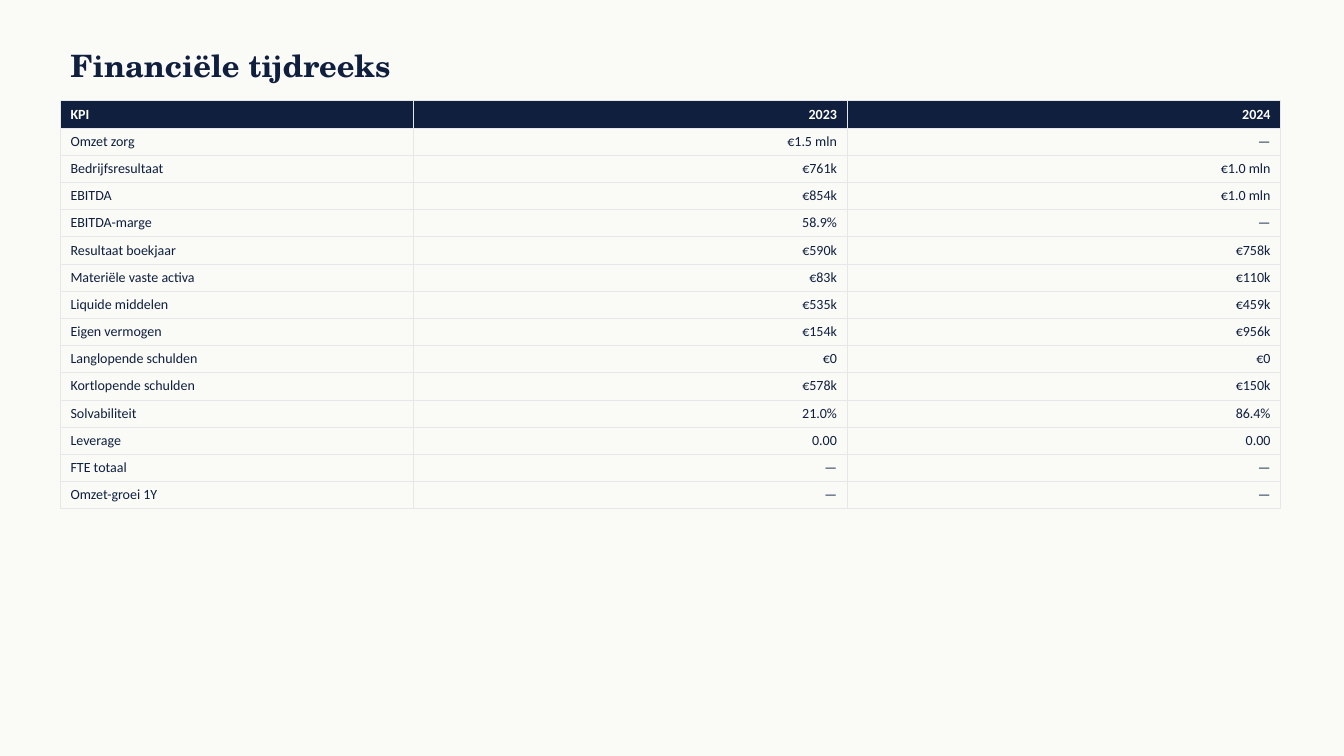
from lxml.etree import SubElement
from pptx import Presentation
from pptx.dml.color import RGBColor
from pptx.enum.text import MSO_ANCHOR, PP_ALIGN
from pptx.oxml.ns import qn
from pptx.util import Inches, Pt

NAVY, WHITE, PAPER, RULE = "0F1F3D", "FFFFFF", "FAFAF7", "E5E7EB"
COLUMN_WIDTHS = (3.5, 4.3, 4.3)
ROW_HEIGHT = 0.27
KPI_ROWS = [
    ("KPI", "2023", "2024"),
    ("Omzet zorg", "€1.5 mln", "—"),
    ("Bedrijfsresultaat", "€761k", "€1.0 mln"),
    ("EBITDA", "€854k", "€1.0 mln"),
    ("EBITDA-marge", "58.9%", "—"),
    ("Resultaat boekjaar", "€590k", "€758k"),
    ("Materiële vaste activa", "€83k", "€110k"),
    ("Liquide middelen", "€535k", "€459k"),
    ("Eigen vermogen", "€154k", "€956k"),
    ("Langlopende schulden", "€0", "€0"),
    ("Kortlopende schulden", "€578k", "€150k"),
    ("Solvabiliteit", "21.0%", "86.4%"),
    ("Leverage", "0.00", "0.00"),
    ("FTE totaal", "—", "—"),
    ("Omzet-groei 1Y", "—", "—"),
]


def color(hex_value):
    return RGBColor.from_string(hex_value)


def write(frame, text, font="Calibri", size=10, fill=NAVY, bold=False,
          align=PP_ALIGN.LEFT):
    para = frame.paragraphs[0]
    para.alignment = align
    span = para.add_run()
    span.text = text
    span.font.name = font
    span.font.size = Pt(size)
    span.font.bold = bold
    span.font.color.rgb = color(fill)


def add_borders(cell, hex_value, width):
    """Draw all four sides; call before the cell gets its fill."""
    properties = cell._tc.get_or_add_tcPr()
    for side in ("lnL", "lnR", "lnT", "lnB"):
        line = SubElement(properties, qn(f"a:{side}"), w=str(Pt(width)))
        solid = SubElement(line, qn("a:solidFill"))
        SubElement(solid, qn("a:srgbClr"), val=hex_value)


def add_title(page, left, top, width, height):
    box = page.shapes.add_textbox(
        Inches(left), Inches(top), Inches(width), Inches(height))
    frame = box.text_frame
    frame.word_wrap = True
    frame.vertical_anchor = MSO_ANCHOR.MIDDLE
    write(frame, "Financiële tijdreeks", font="TeX Gyre Schola", size=22, bold=True)


def add_kpi_table(page, left, top):
    table = page.shapes.add_table(
        len(KPI_ROWS), len(COLUMN_WIDTHS), Inches(left), Inches(top),
        Inches(sum(COLUMN_WIDTHS)), Inches(ROW_HEIGHT * len(KPI_ROWS))).table
    table.horz_banding = False
    for column, width in zip(table.columns, COLUMN_WIDTHS):
        column.width = Inches(width)
    for row_index, values in enumerate(KPI_ROWS):
        is_header = row_index == 0
        table.rows[row_index].height = Inches(ROW_HEIGHT)
        for column_index, value in enumerate(values):
            cell = table.cell(row_index, column_index)
            add_borders(cell, RULE, 0.5)
            if is_header:
                cell.fill.solid()
                cell.fill.fore_color.rgb = color(NAVY)
            else:
                cell.fill.background()
            write(cell.text_frame, value, bold=is_header,
                  fill=WHITE if is_header else NAVY,
                  align=PP_ALIGN.RIGHT if column_index else PP_ALIGN.LEFT)


def main():
    deck = Presentation()
    deck.slide_width, deck.slide_height = Inches(13.33), Inches(7.5)
    page = deck.slides.add_slide(deck.slide_layouts[6])
    page.background.fill.solid()
    page.background.fill.fore_color.rgb = color(PAPER)
    add_title(page, 0.6, 0.4, 12, 0.5)
    add_kpi_table(page, 0.6, 1)
    deck.save("out.pptx")


if __name__ == "__main__":
    main()
